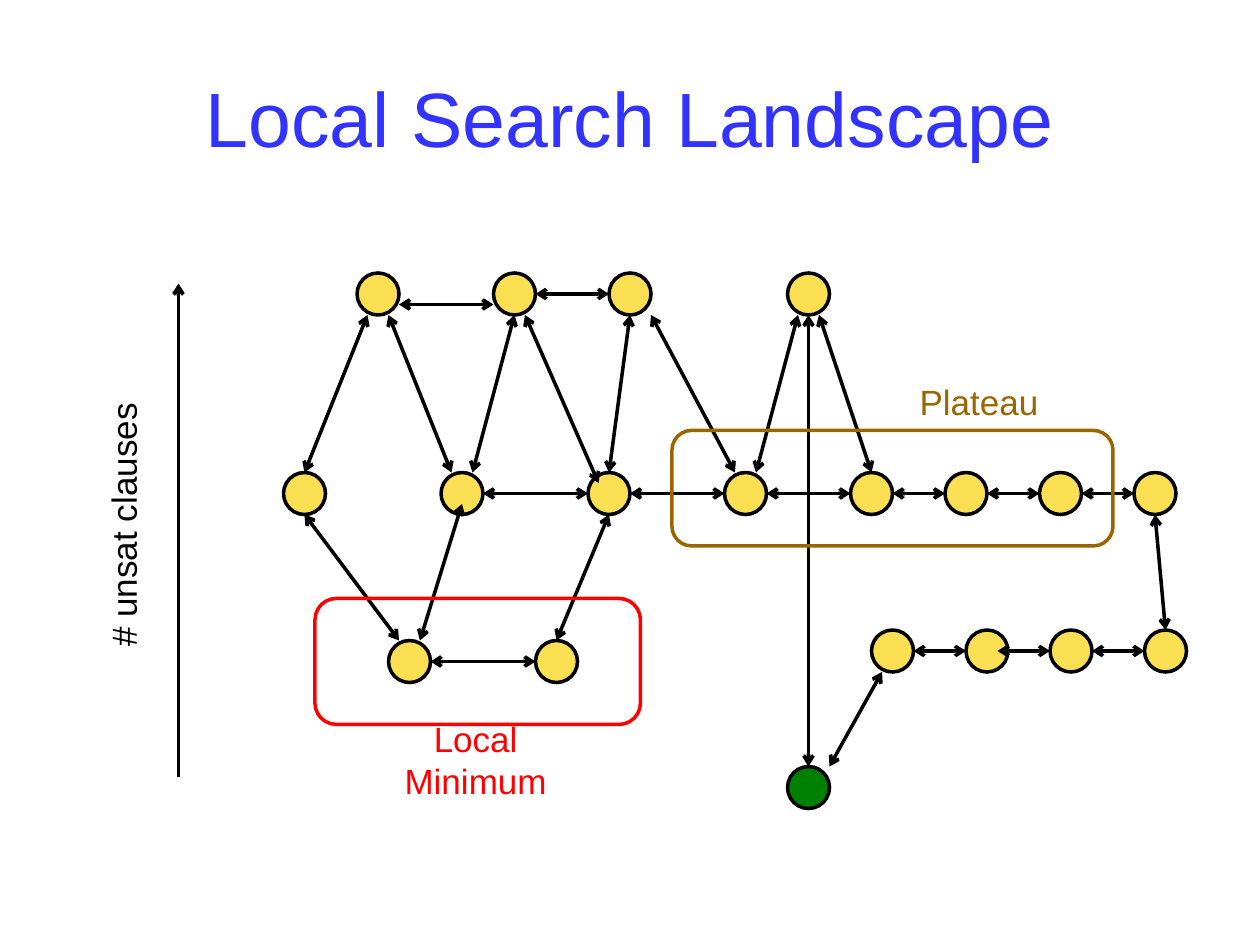
"""Build the local search landscape slide on a grid of 120 columns by 90 rows."""
from dataclasses import dataclass
from itertools import pairwise

from lxml.etree import SubElement as Sub
from pptx import Presentation
from pptx.dml.color import RGBColor as Rgb
from pptx.enum.shapes import MSO_CONNECTOR as Link, MSO_SHAPE as Kind
from pptx.enum.text import MSO_ANCHOR as Anchor, PP_ALIGN as Align
from pptx.oxml.ns import qn
from pptx.util import Inches, Pt


@dataclass(frozen=True)
class Theme:
    font: str = "Arial"
    title: Rgb = Rgb(0x33, 0x33, 0xFF)
    ink: Rgb = Rgb(0, 0, 0)
    node: Rgb = Rgb(0xFB, 0xDF, 0x53)
    goal: Rgb = Rgb(0, 0x80, 0)
    trap: Rgb = Rgb(0xFF, 0, 0)
    flat: Rgb = Rgb(0x99, 0x66, 0)
    head: int = 44
    body: int = 20
    line: int = 2


theme = Theme()
deck = Presentation()
deck.slide_width, deck.slide_height = Inches(10), Inches(7.5)
slide = deck.slides.add_slide(deck.slide_layouts[6])
shapes = slide.shapes
unit = deck.slide_width / 120
size = 4


def arrow(start, end, ends):
    ends_at = [round(n * unit) for n in (*start, *end)]
    link = shapes.add_connector(Link.STRAIGHT, *ends_at)
    link.line.color.rgb = theme.ink
    link.line.width = Pt(theme.line)
    edge = link.line._get_or_add_ln()
    for end_tag in ends:
        Sub(edge, qn(end_tag), type="arrow")
    Sub(link._element.spPr, qn("a:effectLst"))


def draw(kind, place, fill, color):
    shape = shapes.add_shape(kind, *[round(n * unit) for n in place])
    shape.shadow.inherit = False
    if fill is None:
        shape.fill.background()
    else:
        shape.fill.solid()
        shape.fill.fore_color.rgb = fill
    shape.line.color.rgb = color
    shape.line.width = Pt(theme.line)
    return shape


levels = {
    26: [34, 47, 58, 75],
    45: [27, 42, 56, 69, 81, 90, 99, 108],
    60: [83, 92, 100, 109],
    61: [37, 51],
}
for row, cols in levels.items():
    for col in cols:
        draw(Kind.OVAL, (col, row, size, size), theme.node, theme.ink)
draw(Kind.OVAL, (75, 73, size, size), theme.goal, theme.ink)

both = ("a:headEnd", "a:tailEnd")
arrow((17, 74), (17, 27), both[1:])

for row, cols in ((26, levels[26][1:3]), (45, levels[45][1:]),
                  (60, levels[60][:2]), (60, levels[60][2:]),
                  (61, levels[61])):
    for left, right in pairwise(cols):
        arrow((left + size, row + 2), (right, row + 2), both)

moves = [
    ((38, 29), (47, 29)), ((95, 62), (100, 62)),
    ((35, 30), (29, 45)), ((37, 30), (43, 45)),
    ((49, 30), (45, 45)), ((50, 30), (57, 46)),
    ((60, 30), (58, 45)), ((62, 30), (70, 45)),
    ((76, 30), (72, 45)), ((77, 30), (77, 73)),
    ((78, 30), (83, 45)), ((29, 49), (38, 61)),
    ((44, 48), (40, 61)), ((58, 49), (53, 61)),
    ((110, 49), (111, 60)), ((84, 64), (79, 73)),
]
for start, end in moves:
    arrow(start, end, both)

for place, color in (((30, 57, 31, 12), theme.trap),
                     ((64, 41, 42, 11), theme.flat)):
    frame = draw(Kind.ROUNDED_RECTANGLE, place, None, color)
    frame.adjustments[0] = 0.17

labels = [
    ("Local Search Landscape", (6, 3.6, 108, 15), theme.head, theme.title, 0),
    ("# unsat clauses", (-4.3, 47.4, 32, 5.2), theme.body, theme.ink, 270),
    ("Local Minimum", (32.9, 69.7, 24.8, 5.2), theme.body, theme.trap, 0),
    ("Plateau", (86.4, 35.6, 13.7, 5.2), theme.body, theme.flat, 0),
]
for words, place, points, color, turn in labels:
    box = shapes.add_textbox(*[round(n * unit) for n in place])
    box.rotation = turn
    text = box.text_frame
    text.word_wrap = points == theme.head
    text.vertical_anchor = Anchor.MIDDLE
    para = text.paragraphs[0]
    para.alignment = Align.CENTER
    run = para.add_run()
    run.text = words
    run.font.name = theme.font
    run.font.size = Pt(points)
    run.font.color.rgb = color

deck.save("out.pptx")
